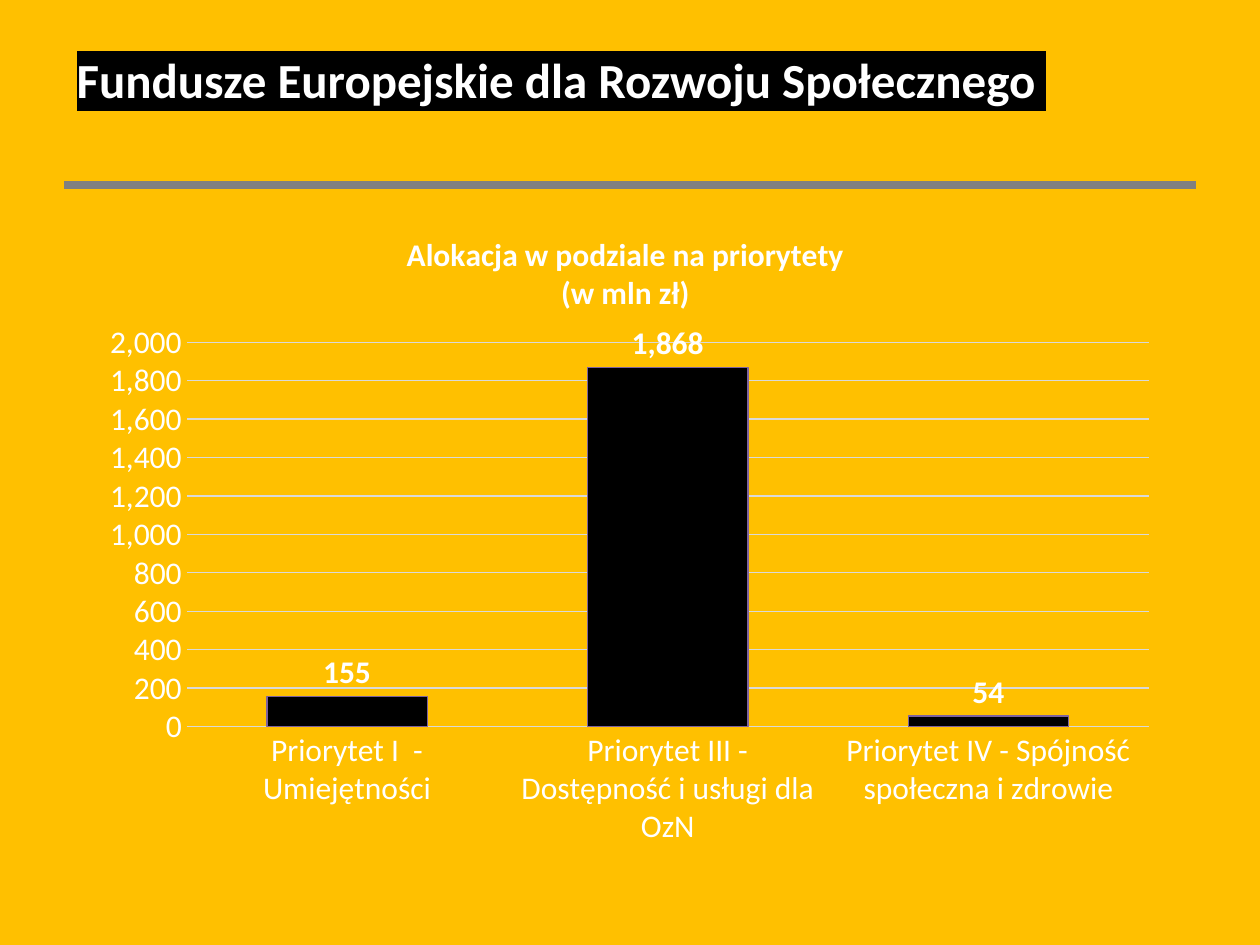
import pptx
import pptx.util
import pptx.oxml
import pptx.chart.data
import pptx.enum.chart
import pptx.enum.shapes
import pptx.dml.color
import lxml.etree as etree

Inches = pptx.util.Inches
Pt = pptx.util.Pt
HUES = {"gold": "FFC000", "white": "FFFFFF", "black": "000000",
        "rule": "808080", "grid": "D9D9D9", "edge": "7D629E"}
DML = "http://schemas.openxmlformats.org/drawingml/2006/main"
CML = "http://schemas.openxmlformats.org/drawingml/2006/chart"


class Deck:
    """Hold the style and the current slide, and draw each kind of element."""

    def __init__(self):
        self.show = pptx.Presentation()
        self.show.slide_width, self.show.slide_height = Inches(10), Inches(7.5)
        self.face = "Calibri"
        self.slide = self.show.slides.add_slide(self.show.slide_layouts[6])
        self.paint(self.slide.background.fill, "gold")

    def paint(self, fill, hue):
        fill.solid()
        fill.fore_color.rgb = pptx.dml.color.RGBColor.from_string(HUES[hue])

    def stroke(self, line, hue, width):
        self.paint(line.fill, hue)
        line.width = Pt(width)

    def style(self, font, size, bold=False):
        font.name, font.size, font.bold = self.face, Pt(size), bold
        self.paint(font.fill, "white")

    def rule(self, left, right, top):
        line = self.slide.shapes.add_connector(
            pptx.enum.shapes.MSO_CONNECTOR.STRAIGHT,
            Inches(left), Inches(top), Inches(right), Inches(top))
        self.stroke(line.line, "rule", 4.5)
        etree.SubElement(line._element.spPr, f"{{{DML}}}effectLst")

    def head(self, text, *box):
        frame = self.slide.shapes.add_textbox(*map(Inches, box)).text_frame
        frame.word_wrap = True
        para = frame.paragraphs[0]
        run = para.add_run()
        run.text = text
        self.style(para.font, 28, True)
        mark = etree.SubElement(run._r.get_or_add_rPr(), f"{{{DML}}}highlight")
        etree.SubElement(mark, f"{{{DML}}}srgbClr", val=HUES["black"])

    def place(self, part, **spots):
        """Fix a chart part at fractions of the chart's size."""
        for old in part.findall(f"{{{CML}}}layout"):
            part.remove(old)
        modes = {"xMode": "edge", "yMode": "edge"}
        if "w" in spots:
            modes = {"layoutTarget": "inner", **modes}
        items = "".join(f'<c:{key} val="{val}"/>'
                        for key, val in {**modes, **spots}.items())
        node = pptx.oxml.parse_xml(
            f'<c:layout xmlns:c="{CML}"><c:manualLayout>{items}'
            '</c:manualLayout></c:layout>')
        text = part.find(f"{{{CML}}}tx")
        part.insert(0 if text is None else 1, node)

    def bars(self, title, data, *box):
        kinds = pptx.enum.chart
        sheet = pptx.chart.data.CategoryChartData(number_format="#,##0")
        sheet.categories = list(data)
        sheet.add_series("Series 1", list(data.values()))
        chart = self.slide.shapes.add_chart(
            kinds.XL_CHART_TYPE.COLUMN_CLUSTERED,
            *map(Inches, box), sheet).chart
        chart.font.name, chart.font.size = self.face, Pt(10)
        chart.has_legend = False
        frame = chart.chart_title.text_frame
        frame.text = title
        for para in frame.paragraphs:
            self.style(para.font, 18, True)
        self.place(chart.chart_title._element, x=0.29, y=0.05)
        self.place(chart._chartSpace.chart.plotArea,
                   x=0.09, y=0.22, w=0.89, h=0.58)

        for axis in (chart.category_axis, chart.value_axis):
            axis.major_tick_mark = kinds.XL_TICK_MARK.NONE
            axis.minor_tick_mark = kinds.XL_TICK_MARK.NONE
            self.style(axis.tick_labels.font, 18)
        self.stroke(chart.category_axis.format.line, "grid", 0.75)
        axis = chart.value_axis
        axis.minimum_scale, axis.maximum_scale, axis.major_unit = 0, 2000, 200
        axis.tick_labels.number_format = "#,##0"
        axis.tick_labels.number_format_is_linked = False
        axis.format.line.fill.background()
        self.stroke(axis.major_gridlines.format.line, "grid", 0.75)

        plot = chart.plots[0]
        plot.gap_width, plot.overlap = 100, -24
        plot.vary_by_categories = False
        bar = plot.series[0]
        self.paint(bar.format.fill, "black")
        self.stroke(bar.format.line, "edge", 0.75)
        tags = bar.data_labels
        tags.show_value = True
        tags.number_format, tags.number_format_is_linked = "#,##0", False
        tags.position = kinds.XL_LABEL_POSITION.OUTSIDE_END
        self.style(tags.font, 18, True)


def main():
    deck = Deck()
    deck.rule(0.51, 9.49, 1.47)
    deck.head("Fundusze Europejskie dla Rozwoju Społecznego ",
              0.51, 0.34, 8.27, 0.57)
    deck.bars("Alokacja w podziale na priorytety\n(w mln zł)", {
        "Priorytet I  - Umiejętności": 155,
        "Priorytet III - Dostępność i usługi dla OzN": 1868,
        "Priorytet IV - Spójność społeczna i zdrowie": 54,
    }, 0.71, 1.56, 8.58, 5.26)
    deck.show.save("out.pptx")


if __name__ == "__main__":
    main()
